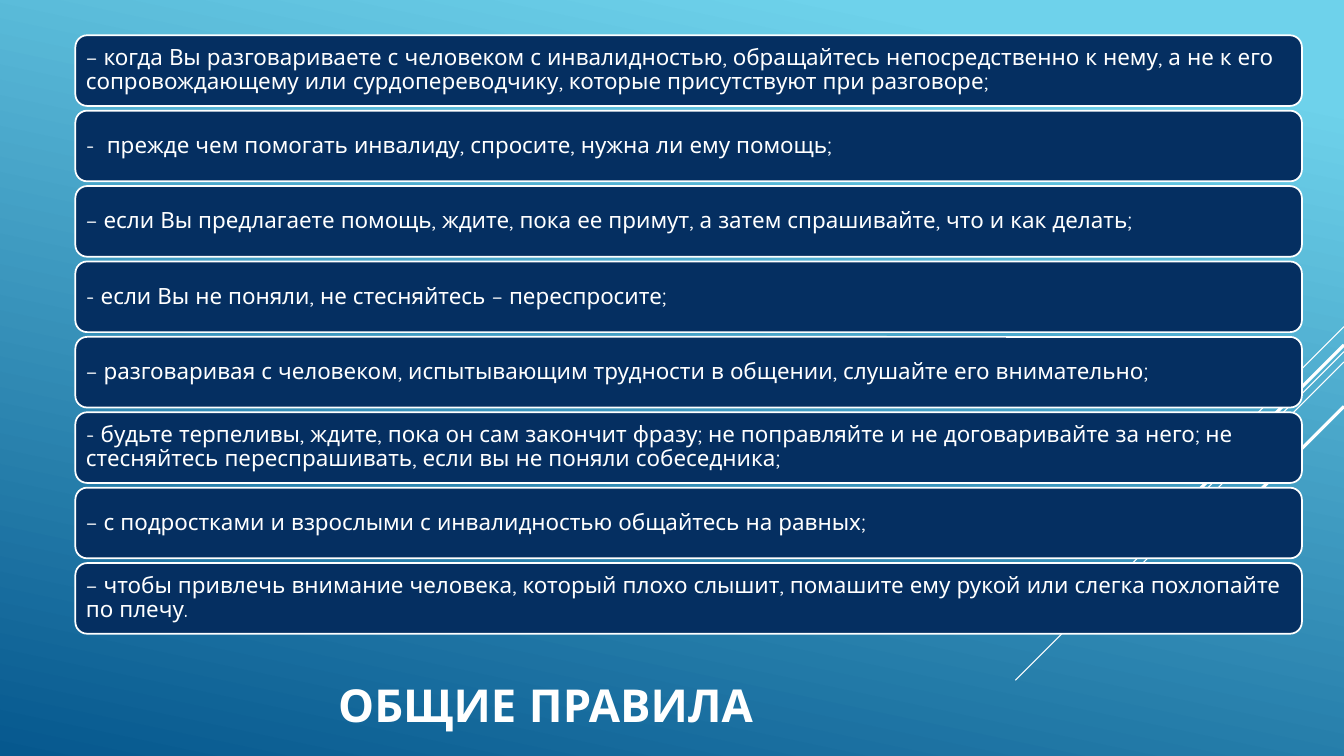
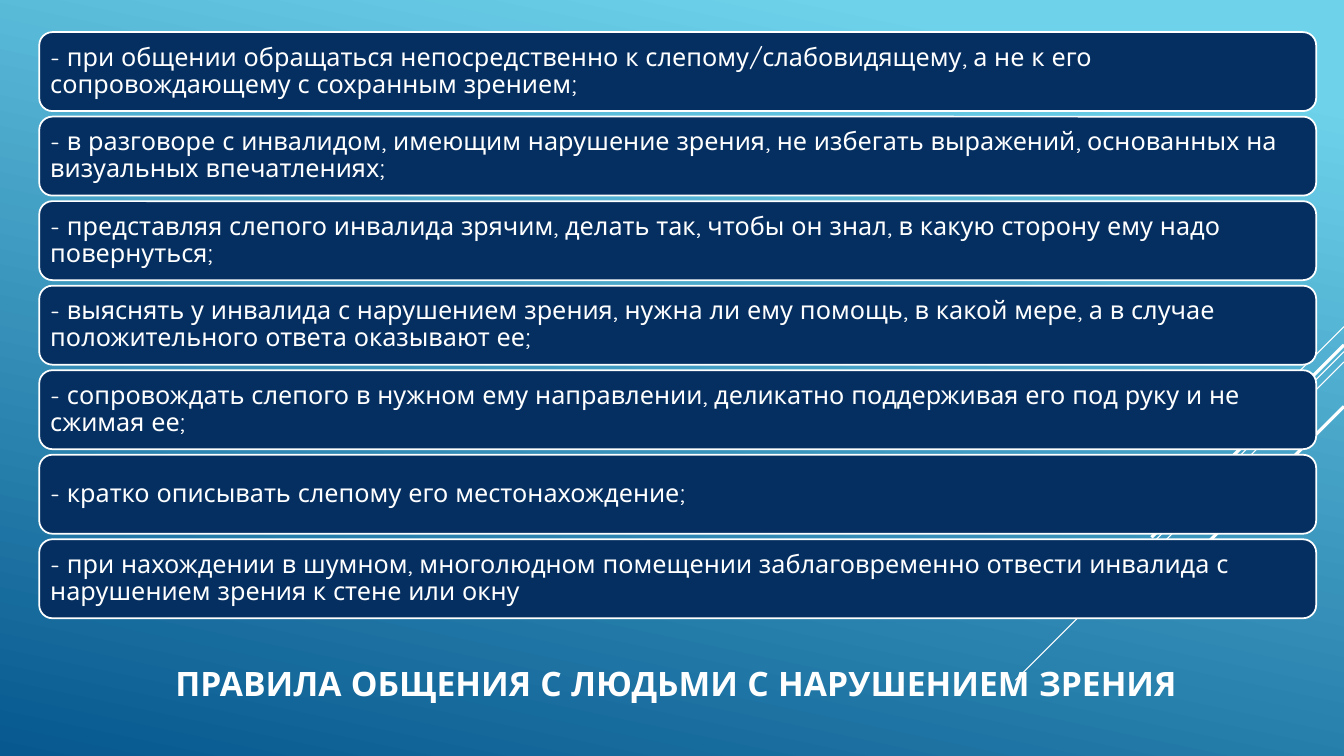
from lxml.etree import SubElement
from pptx import Presentation
from pptx.dml.color import RGBColor
from pptx.enum.shapes import MSO_CONNECTOR, MSO_SHAPE
from pptx.enum.text import MSO_ANCHOR, MSO_AUTO_SIZE, PP_ALIGN
from pptx.oxml.ns import qn
from pptx.util import Cm, Pt

COLOURS = {"sky": "6ED2EB", "deep": "06588E", "panel": "052F61", "white": "FFFFFF"}
FONT = "Quicksand"
WIDTH, HEIGHT = 33.87, 19.05
PANEL_INSET = 0.18

RAYS = [
    (8.23, 2.54, 0.75),
    (8.86, 8.28, 0.75),
    (9.12, 5.27, 0.75),
    (8.69, 4.85, 2.25),
    (10.24, 3.53, 2.25),
]

SLIDES = [
    {
        "title": "ОБЩИЕ ПРАВИЛА",
        "title_box": (1.9, 17.04, 23.7, 1.6),
        "title_size": 32.4,
        "first_panel": (1.9, 0.89, 30.91, 1.78),
        "gap": 0.12,
        "rule_size": 16,
        "rules": [
            "− когда Вы разговариваете с человеком с инвалидностью, обращайтесь непосредственно к нему, а не к его сопровождающему или сурдопереводчику, которые присутствуют при разговоре;",
            "-  прежде чем помогать инвалиду, спросите, нужна ли ему помощь;",
            "− если Вы предлагаете помощь, ждите, пока ее примут, а затем спрашивайте, что и как делать;",
            "- если Вы не поняли, не стесняйтесь – переспросите;",
            "− разговаривая с человеком, испытывающим трудности в общении, слушайте его внимательно;",
            "- будьте терпеливы, ждите, пока он сам закончит фразу; не поправляйте и не договаривайте за него; не стесняйтесь переспрашивать, если вы не поняли собеседника;",
            "− с подростками и взрослыми с инвалидностью общайтесь на равных;",
            "− чтобы привлечь внимание человека, который плохо слышит, помашите ему рукой или слегка похлопайте по плечу.",
        ],
    },
    {
        "title": "ПРАВИЛА ОБЩЕНИЯ С ЛЮДЬМИ С НАРУШЕНИЕМ ЗРЕНИЯ",
        "title_box": (1.9, 16.41, 30.28, 1.75),
        "title_size": 24,
        "first_panel": (0.99, 0.81, 32.18, 1.99),
        "gap": 0.14,
        "rule_size": 18,
        "rules": [
            "- при общении обращаться непосредственно к слепому/слабовидящему, а не к его сопровождающему с сохранным зрением;",
            "- в разговоре с инвалидом, имеющим нарушение зрения, не избегать выражений, основанных на визуальных впечатлениях;",
            "- представляя слепого инвалида зрячим, делать так, чтобы он знал, в какую сторону ему надо повернуться;",
            "- выяснять у инвалида с нарушением зрения, нужна ли ему помощь, в какой мере, а в случае положительного ответа оказывают ее;",
            "- сопровождать слепого в нужном ему направлении, деликатно поддерживая его под руку и не сжимая ее;",
            "- кратко описывать слепому его местонахождение;",
            "- при нахождении в шумном, многолюдном помещении заблаговременно отвести инвалида с нарушением зрения к стене или окну",
        ],
    },
]


def colour(key):
    return RGBColor.from_string(COLOURS[key])


def write(frame, text, size, align, bold=False):
    frame.text = text
    frame.word_wrap = True
    frame.auto_size = MSO_AUTO_SIZE.NONE
    frame.vertical_anchor = MSO_ANCHOR.MIDDLE
    paragraph = frame.paragraphs[0]
    paragraph.alignment = align
    paragraph.line_spacing = 0.9
    font = paragraph.runs[0].font
    font.name, font.size, font.bold = FONT, Pt(size), bold
    font.color.rgb = colour("white")


def paint_background(master):
    fill = master.background.fill
    fill.gradient()
    fill.gradient_angle = 258
    for stop, key, position in zip(fill.gradient_stops, ("sky", "deep"), (0.1, 1)):
        stop.color.rgb = colour(key)
        stop.position = position


def add_rays(master, slide):
    for top, run, weight in RAYS:
        ray = slide.shapes.add_connector(
            MSO_CONNECTOR.STRAIGHT, Cm(WIDTH), Cm(top), Cm(WIDTH - run), Cm(top + run)
        )
        ray.line.color.rgb = colour("white")
        ray.line.width = Pt(weight)
        SubElement(ray.element.spPr, qn("a:effectLst"))
        master.shapes.element.append(ray.element)


def add_title(slide, content):
    title = slide.shapes.title
    title.left, title.top, title.width, title.height = map(Cm, content["title_box"])
    write(title.text_frame, content["title"], content["title_size"], PP_ALIGN.CENTER, True)


def add_rules(slide, content):
    left, top, width, height = content["first_panel"]
    for index, rule in enumerate(content["rules"]):
        panel_top = top + index * (height + content["gap"])
        panel = slide.shapes.add_shape(
            MSO_SHAPE.ROUNDED_RECTANGLE, Cm(left), Cm(panel_top), Cm(width), Cm(height)
        )
        panel.shadow.inherit = False
        panel.fill.solid()
        panel.fill.fore_color.rgb = colour("panel")
        panel.line.color.rgb = colour("white")
        panel.line.width = Pt(1.25)
        frame = panel.text_frame
        frame.margin_left = frame.margin_right = Cm(PANEL_INSET)
        frame.margin_top = frame.margin_bottom = Cm(PANEL_INSET)
        write(frame, rule, content["rule_size"], PP_ALIGN.LEFT)


def main():
    deck = Presentation()
    deck.slide_width, deck.slide_height = Cm(WIDTH), Cm(HEIGHT)
    master = deck.slide_master
    paint_background(master)
    title_only = deck.slide_layouts.get_by_name("Title Only")
    for content in SLIDES:
        slide = deck.slides.add_slide(title_only)
        add_title(slide, content)
        add_rules(slide, content)
    add_rays(master, slide)
    deck.save("out.pptx")


if __name__ == "__main__":
    main()
